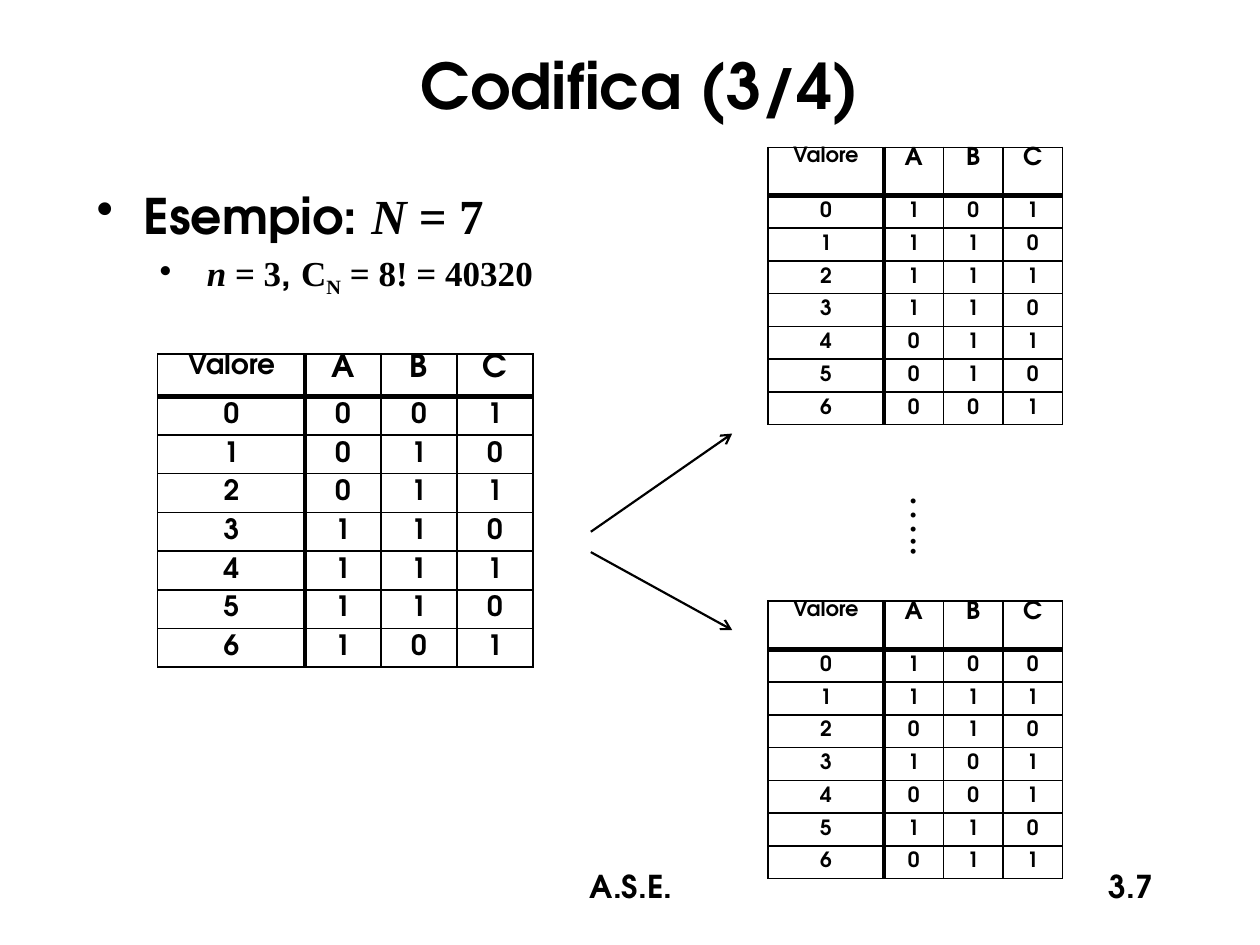
import dataclasses

import pptx
import pptx.dml.color
import pptx.enum.shapes
import pptx.enum.text
import pptx.oxml
import pptx.oxml.ns
import pptx.util

Cm = pptx.util.Cm
Pt = pptx.util.Pt
ALIGN = pptx.enum.text.PP_ALIGN
ANCHOR = pptx.enum.text.MSO_ANCHOR


@dataclasses.dataclass(frozen=True)
class Theme:
    ink: str = "000000"
    sans: str = "TeX Gyre Adventor"
    serif: str = "Times New Roman"
    title: int = 36
    heading: int = 28
    detail: int = 20
    dots: int = 24
    footer: int = 18
    thin: float = 1
    thick: float = 3
    arrow: float = 1.25


THEME = Theme()
INK = pptx.dml.color.RGBColor.from_string(THEME.ink)
HEADER = ["Valore", "A", "B", "C"]


def xml(markup):
    namespace = pptx.oxml.ns.nsdecls("a")
    return pptx.oxml.parse_xml(markup.replace(" ", f" {namespace} ", 1))


def add_span(para, text, size, font=THEME.sans, bold=True, italic=False):
    span = para.add_run()
    span.text = text
    span.font.size = Pt(size)
    span.font.name = font
    span.font.bold = bold
    span.font.italic = italic
    span.font.color.rgb = INK
    return span


def set_space_before(para, percent=20):
    """Set the space before as a share of the line, ahead of any bullet."""
    para._p.get_or_add_pPr().insert(
        0, xml(f'<a:spcBef ><a:spcPct val="{percent * 1000}"/></a:spcBef>'))


def set_bullet(para, left, hanging):
    properties = para._p.get_or_add_pPr()
    properties.set("marL", str(left))
    properties.set("indent", str(-hanging))
    properties.append(xml('<a:buChar char="•"/>'))


def add_box(page, left, top, width, height, anchor=ANCHOR.TOP, wrap=True):
    box = page.shapes.add_textbox(Cm(left), Cm(top), Cm(width), Cm(height))
    box.text_frame.word_wrap = wrap
    box.text_frame.vertical_anchor = anchor
    return box


def add_label(page, place, text, size, align, anchor=ANCHOR.TOP):
    para = add_box(page, *place, anchor).text_frame.paragraphs[0]
    para.alignment = align
    add_span(para, text, size)


def add_example(page):
    frame = add_box(page, 1.7, 3.61, 24.13, 14.17).text_frame
    heading = frame.paragraphs[0]
    set_space_before(heading)
    set_bullet(heading, Cm(0.95), Cm(0.95))
    add_span(heading, "Esempio: ", THEME.heading)
    add_span(heading, "N ", THEME.heading, THEME.serif, italic=True)
    add_span(heading, "= 7", THEME.heading, THEME.serif)

    detail = frame.add_paragraph()
    detail.level = 1
    set_space_before(detail)
    set_bullet(detail, Cm(2.22), Cm(0.95))
    add_span(detail, "n", THEME.detail, THEME.serif, italic=True)
    add_span(detail, " = 3", THEME.detail, THEME.serif)
    add_span(detail, ", ", THEME.detail)
    add_span(detail, "C", THEME.detail, THEME.serif)
    subscript = add_span(detail, "N", THEME.detail, THEME.serif)
    subscript.font._element.set("baseline", "-25000")
    add_span(detail, " = 8! = 40320", THEME.detail, THEME.serif)


def set_borders(cell, row, column):
    """Thin grid, thick below the header and right of the value column."""
    thick_sides = {"L": column == 1, "R": column == 0,
                   "T": row == 1, "B": row == 0}
    properties = cell._tc.get_or_add_tcPr()
    for side, is_thick in thick_sides.items():
        width = Pt(THEME.thick if is_thick else THEME.thin)
        properties.append(xml(
            f'<a:ln{side} w="{width}"><a:solidFill><a:srgbClr val="{THEME.ink}"/>'
            f'</a:solidFill></a:ln{side}>'))


def add_code_table(page, left, top, widths, heights, size, codes):
    """Code table: widths are (value, bit), heights are (header, body)."""
    rows = [HEADER] + [[str(value), *code] for value, code in enumerate(codes)]
    column_widths = [widths[0]] + [widths[1]] * 3
    row_heights = [heights[0]] + [heights[1]] * len(codes)
    table = page.shapes.add_table(
        len(rows), len(HEADER), Cm(left), Cm(top),
        Cm(sum(column_widths)), Cm(sum(row_heights))).table
    table.first_row = table.horz_banding = False
    for column, width in zip(table.columns, column_widths):
        column.width = Cm(width)
    for r, texts in enumerate(rows):
        table.rows[r].height = Cm(row_heights[r])
        for c, text in enumerate(texts):
            cell = table.cell(r, c)
            cell.margin_top = cell.margin_bottom = 0
            cell.margin_left = cell.margin_right = Cm(0.1)
            cell.vertical_anchor = ANCHOR.MIDDLE if r else ANCHOR.TOP
            set_borders(cell, r, c)
            cell.fill.background()
            para = cell.text_frame.paragraphs[0]
            para.alignment = ALIGN.CENTER
            if r == 0:
                set_space_before(para)
            add_span(para, text, size + 2 if r == 0 and c else size)


def add_dots(page):
    box = add_box(page, 17.81, 9.98, 1.8, 1.27, wrap=False)
    box.rotation = 90
    add_span(box.text_frame.paragraphs[0], "…..", THEME.dots, THEME.serif, bold=False)


def add_arrow(page, start, end):
    arrow = page.shapes.add_connector(
        pptx.enum.shapes.MSO_CONNECTOR.STRAIGHT, *map(Cm, start + end))
    arrow.line.color.rgb = INK
    arrow.line.width = Pt(THEME.arrow)
    arrow.line._get_or_add_ln().append(xml('<a:tailEnd type="arrow"/>'))
    arrow._element.spPr.append(xml("<a:effectLst />"))


def main():
    deck = pptx.Presentation()
    deck.slide_width, deck.slide_height = Cm(25.4), Cm(19.05)
    page = deck.slides.add_slide(deck.slide_layouts[6])

    add_label(page, (8.69, 17.35, 8.05, 1.27), "A.S.E.", THEME.footer, ALIGN.CENTER)
    add_label(page, (18.21, 17.35, 5.28, 1.27), "3.7", THEME.footer, ALIGN.RIGHT)
    add_label(page, (0.84, 0.43, 24.13, 2.54), "Codifica (3/4)", THEME.title,
              ALIGN.CENTER, ANCHOR.MIDDLE)
    add_example(page)

    add_code_table(page, 3.18, 7.14, (2.97, 1.53), (0.85, 0.78), 16,
                   ["001", "010", "011", "110", "111", "110", "101"])
    small_tables = {
        2.97: ["101", "110", "111", "110", "011", "010", "001"],
        12.12: ["100", "111", "010", "101", "001", "110", "011"],
    }
    for top, codes in small_tables.items():
        add_code_table(page, 15.48, top, (2.34, 1.2), (0.97, 0.66), 12, codes)

    add_dots(page)
    add_arrow(page, (11.91, 10.72), (14.76, 8.74))
    add_arrow(page, (11.91, 11.13), (14.76, 12.7))
    deck.save("out.pptx")


if __name__ == "__main__":
    main()
